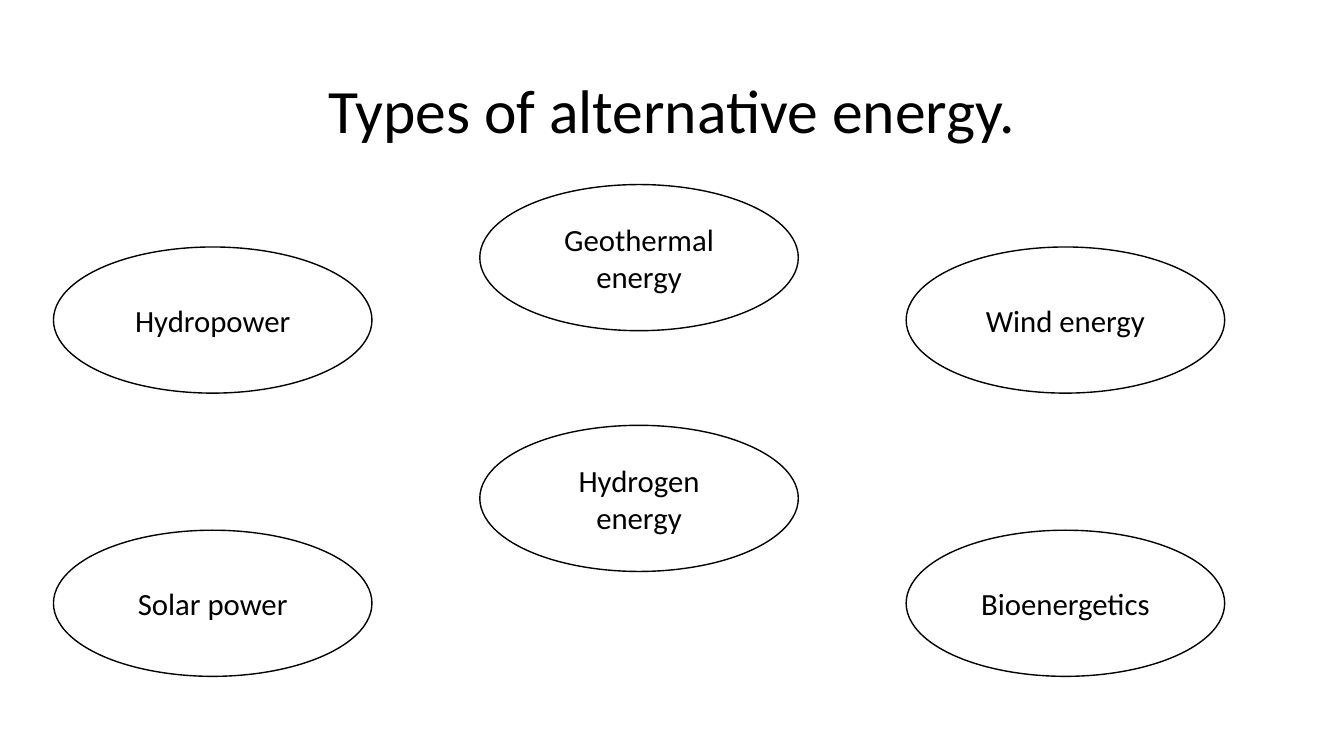
"""Build the slide on types of alternative energy."""
from pptx import Presentation
from pptx.dml.color import RGBColor
from pptx.enum.shapes import MSO_SHAPE
from pptx.enum.text import MSO_ANCHOR, PP_ALIGN
from pptx.util import Pt

BLACK = "000000"
WHITE = "FFFFFF"
LEFT, STEP = 38.2, 304.55
WIDTH, HEIGHT = 227.5, 104.4
COLUMNS = [
    [("Hydropower", 176.4), ("Solar power", 378.7)],
    [("Geothermal energy", 131.8), ("Hydrogen energy", 303.8)],
    [("Wind energy", 176.4), ("Bioenergetics", 378.7)],
]


def color(code):
    """Return the colour for a hex string."""
    return RGBColor.from_string(code)


def write(shape, text, size):
    """Put centred text in the middle of a shape."""
    frame = shape.text_frame
    frame.word_wrap = True
    frame.vertical_anchor = MSO_ANCHOR.MIDDLE
    para = frame.paragraphs[0]
    para.alignment = PP_ALIGN.CENTER
    run = para.add_run()
    run.text = text
    run.font.name = "Calibri"
    run.font.size = Pt(size)
    run.font.color.rgb = color(BLACK)
    return para


def add_title(slide, text):
    """Add the slide title."""
    box = slide.shapes.add_textbox(Pt(66), Pt(28.75), Pt(828), Pt(104.4))
    write(box, text, 44).line_spacing = 0.9


def add_oval(slide, text, left, top):
    """Add an outlined ellipse with a label."""
    oval = slide.shapes.add_shape(
        MSO_SHAPE.OVAL, Pt(left), Pt(top), Pt(WIDTH), Pt(HEIGHT))
    oval.shadow.inherit = False
    oval.fill.solid()
    oval.fill.fore_color.rgb = color(WHITE)
    oval.line.color.rgb = color(BLACK)
    oval.line.width = Pt(1)
    write(oval, text, 22)


def main():
    """Create and save the slide."""
    deck = Presentation()
    deck.slide_width, deck.slide_height = Pt(960), Pt(540)
    slide = deck.slides.add_slide(deck.slide_layouts[6])
    add_title(slide, "Types of alternative energy.")
    for index, column in enumerate(COLUMNS):
        for text, top in column:
            add_oval(slide, text, LEFT + index * STEP, top)
    deck.save("out.pptx")


if __name__ == "__main__":
    main()
